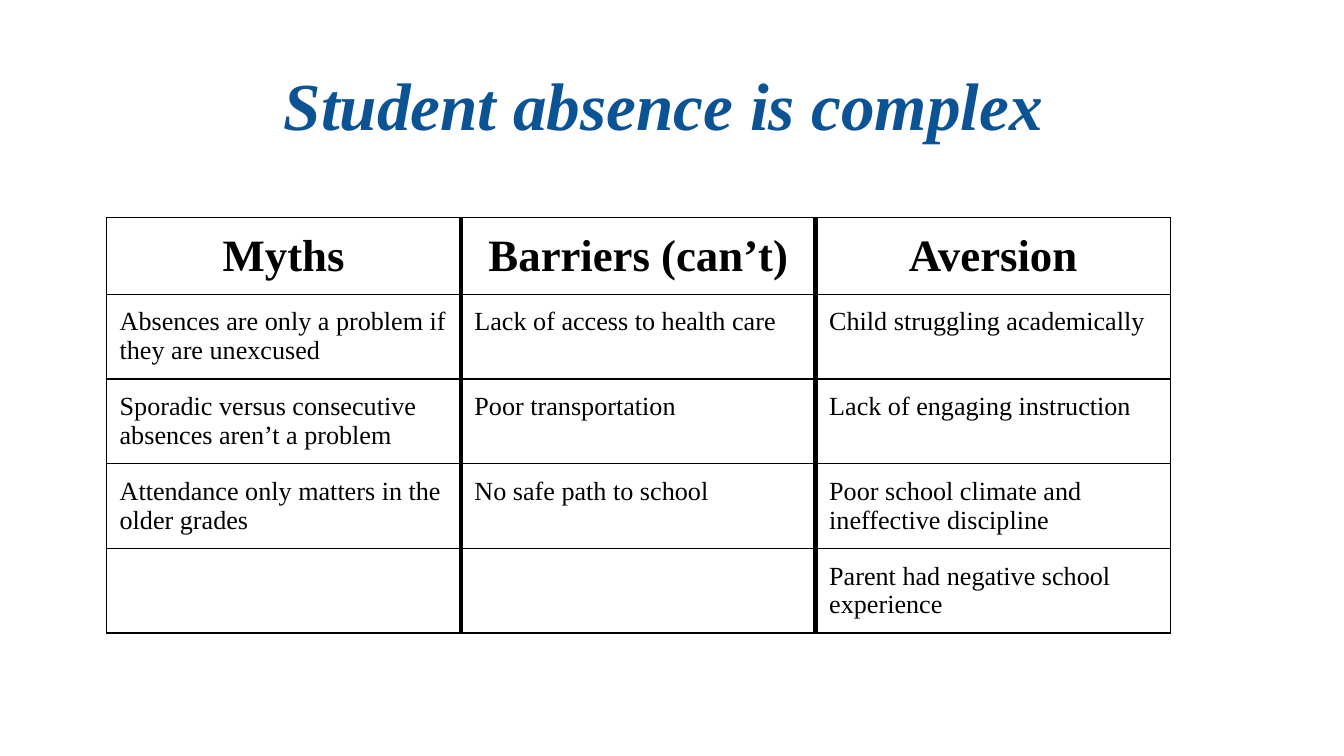
import pptx
import pptx.util
import pptx.dml.color
import pptx.enum.text
import pptx.oxml.ns
from lxml import etree

Inches = pptx.util.Inches
Pt = pptx.util.Pt
PP_ALIGN = pptx.enum.text.PP_ALIGN


def rgb(hex_string):
    return pptx.dml.color.RGBColor.from_string(hex_string)


class AbsenceSlide:
    font = "Times New Roman"
    title_color = "0B5394"
    ink = "000000"
    thin, thick = 0.75, 3
    padding = Inches(0.1)

    def __init__(self, slide):
        self.slide = slide

    def style_text(self, frame, size, color, align, bold=False, italic=False):
        for paragraph in frame.paragraphs:
            paragraph.alignment = align
            for run in paragraph.runs:
                run.font.name = self.font
                run.font.size = Pt(size)
                run.font.color.rgb = rgb(color)
                run.font.bold = bold
                run.font.italic = italic

    def add_title(self, wording, left, top, width, height):
        title = self.slide.shapes.title
        title.left, title.top = Inches(left), Inches(top)
        title.width, title.height = Inches(width), Inches(height)
        frame = title.text_frame
        frame.text = wording
        frame.word_wrap = True
        frame.auto_size = pptx.enum.text.MSO_AUTO_SIZE.NONE
        frame.vertical_anchor = pptx.enum.text.MSO_ANCHOR.BOTTOM
        frame.margin_left = frame.margin_right = self.padding
        frame.margin_top = frame.margin_bottom = self.padding
        self.style_text(frame, 36, self.title_color, PP_ALIGN.CENTER, True, True)

    def add_border(self, cell, side, points):
        properties = cell._tc.get_or_add_tcPr()
        qn = pptx.oxml.ns.qn
        line = etree.Element(qn(f"a:ln{side}"), w=str(Pt(points)))
        fill = etree.SubElement(line, qn("a:solidFill"))
        etree.SubElement(fill, qn("a:srgbClr"), val=self.ink)
        properties.insert("LRTB".index(side), line)

    def add_table(self, rows, left, top, column_width, row_height):
        row_count, column_count = len(rows), len(rows[0])
        table = self.slide.shapes.add_table(
            row_count, column_count, Inches(left), Inches(top),
            Inches(column_width * column_count), Inches(row_height * row_count),
        ).table
        table.first_row = table.horz_banding = False
        for column in table.columns:
            column.width = Inches(column_width)
        for row in table.rows:
            row.height = Inches(row_height)
        for row_index, row in enumerate(rows):
            is_header = row_index == 0
            for column_index, wording in enumerate(row):
                cell = table.cell(row_index, column_index)
                cell.text = wording
                cell.margin_left = cell.margin_right = self.padding
                cell.margin_top = cell.margin_bottom = self.padding
                cell.fill.background()
                self.style_text(
                    cell.text_frame, 24 if is_header else 14, self.ink,
                    PP_ALIGN.CENTER if is_header else PP_ALIGN.LEFT, is_header,
                )
                last = column_index == column_count - 1
                self.add_border(cell, "L", self.thick if column_index else self.thin)
                self.add_border(cell, "R", self.thin if last else self.thick)
                self.add_border(cell, "T", self.thin)
                self.add_border(cell, "B", self.thin)


def main():
    presentation = pptx.Presentation()
    presentation.slide_width = Inches(10)
    presentation.slide_height = Inches(10 * 9 / 16)
    absence = AbsenceSlide(
        presentation.slides.add_slide(presentation.slide_layouts[5])
    )
    absence.add_title("Student absence is complex ", 0.5, 0.23, 9, 0.94)
    reasons = [
        ("Myths", "Barriers (can’t)", "Aversion"),
        ("Absences are only a problem if they are unexcused",
         "Lack of access to health care", "Child struggling academically"),
        ("Sporadic versus consecutive absences aren’t a problem",
         "Poor transportation", "Lack of engaging instruction"),
        ("Attendance only matters in the older grades",
         "No safe path to school", "Poor school climate and ineffective discipline"),
        ("", "", "Parent had negative school experience"),
    ]
    absence.add_table(reasons, 0.79, 1.62, 2.64, 0.42)
    presentation.save("out.pptx")


if __name__ == "__main__":
    main()
